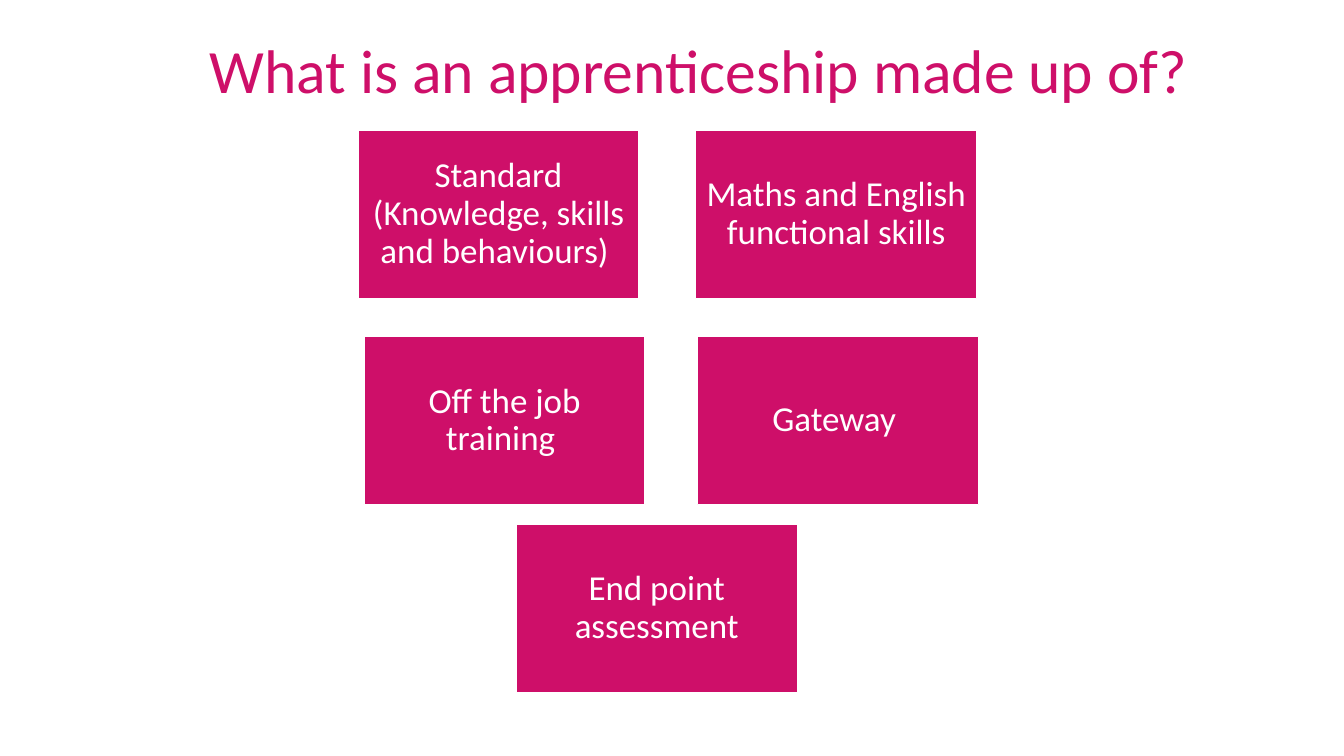
from pptx import Presentation
from pptx.dml.color import RGBColor
from pptx.enum import shapes, text
from pptx.util import Pt

MAGENTA = RGBColor(0xCE, 0x0F, 0x69)
WHITE = RGBColor(0xFF, 0xFF, 0xFF)
FONT = "Calibri"
BOX_WIDTH, BOX_HEIGHT = 200.9, 120.4
INSET = Pt(7.2)

BOXES = [
    ("Standard (Knowledge, skills and behaviours) ", 255.6, 92.9),
    ("Maths and English functional skills", 496.8, 92.9),
    ("Off the job training ", 259.9, 240.2),
    ("Gateway ", 498.2, 240.2),
    ("End point assessment", 368.6, 374.4),
]


def write_text(frame, words, size, color, alignment):
    frame.text = words
    frame.word_wrap = True
    frame.auto_size = text.MSO_AUTO_SIZE.NONE
    frame.vertical_anchor = text.MSO_ANCHOR.MIDDLE
    paragraph = frame.paragraphs[0]
    paragraph.alignment = alignment
    paragraph.line_spacing = 0.9
    font = paragraph.runs[0].font
    font.name = FONT
    font.size = Pt(size)
    font.color.rgb = color


presentation = Presentation()
presentation.slide_width = Pt(960)
presentation.slide_height = Pt(540)
slide = presentation.slides.add_slide(presentation.slide_layouts[5])

title = slide.shapes.title
title.left, title.top, title.width, title.height = Pt(142.6), Pt(0), Pt(828), Pt(104.4)
write_text(title.text_frame, "What is an apprenticeship made up of?", 44, MAGENTA, text.PP_ALIGN.LEFT)

for words, left, top in BOXES:
    box = slide.shapes.add_shape(
        shapes.MSO_SHAPE.RECTANGLE, Pt(left), Pt(top), Pt(BOX_WIDTH), Pt(BOX_HEIGHT)
    )
    box.shadow.inherit = False
    box.fill.solid()
    box.fill.fore_color.rgb = MAGENTA
    box.line.color.rgb = WHITE
    box.line.width = Pt(1)
    frame = box.text_frame
    frame.margin_left = frame.margin_right = INSET
    frame.margin_top = frame.margin_bottom = INSET
    write_text(frame, words, 25, WHITE, text.PP_ALIGN.CENTER)

presentation.save("out.pptx")
